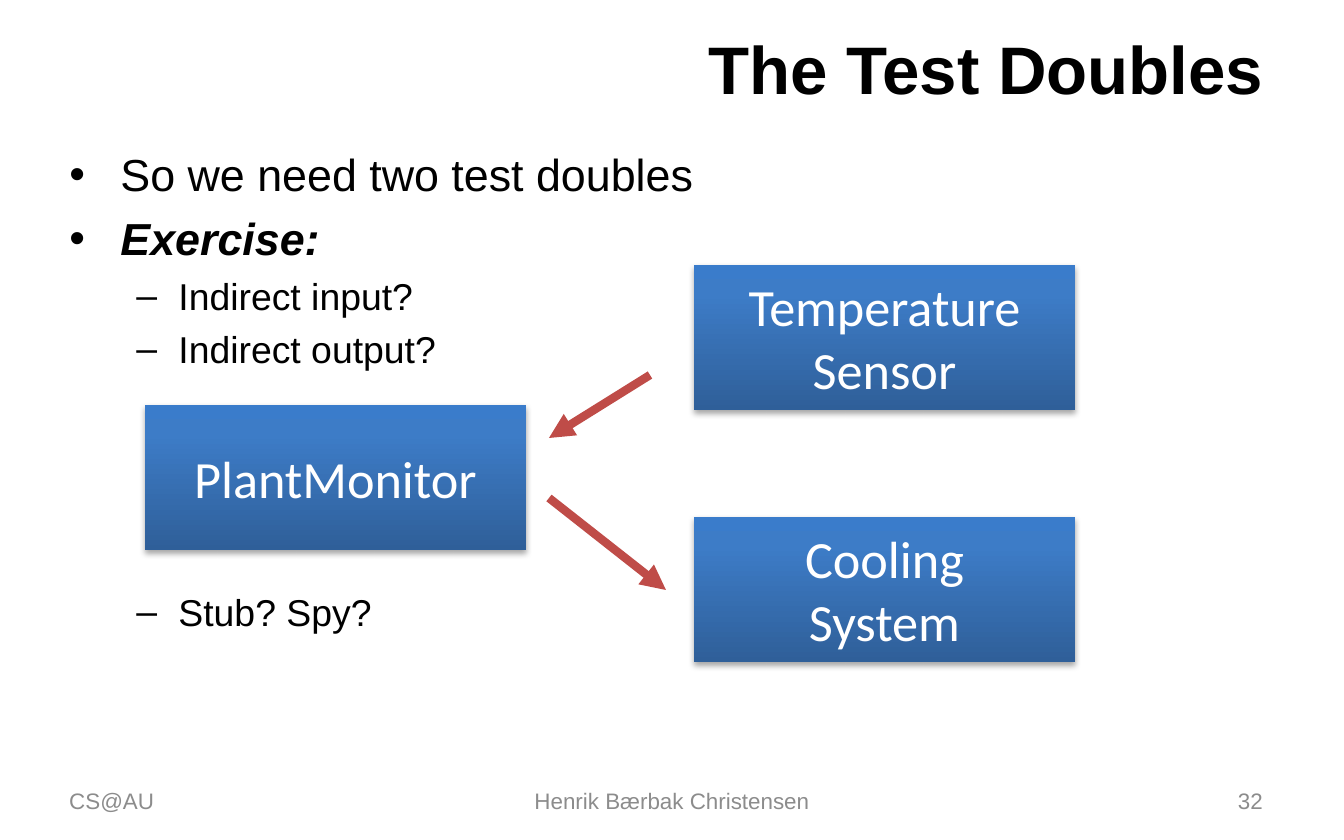
import pptx
import pptx.util
import pptx.dml.color
import pptx.enum.shapes
import pptx.enum.text
import pptx.oxml
import pptx.oxml.ns

PX = 914400 / 134.4
ALIGN = pptx.enum.text.PP_ALIGN
MIDDLE = pptx.enum.text.MSO_ANCHOR.MIDDLE

THEME = {
    "font": "Arial", "box_font": "Calibri",
    "text": "000000", "footer": "8C8C8C", "box_text": "FFFFFF", "arrow": "BF4C48",
    "gradient": [(0, "2F5F99"), (80, "3D7CC7"), (100, "3A7CCB")],
    "title_size": 36, "level_sizes": (24, 20), "box_size": 28, "footer_size": 12,
    "arrow_width": 4.5,
}

# Content; positions are left, top, width, height in px
TITLE = "The Test Doubles"
TITLE_AREA = (67, 24, 1210, 87)
BODY_AREA = (56, 140, 1220, 634)
BULLETS = [  # text, level, emphasised, space before in points
    ("So we need two test doubles", 0, False, 0),
    ("Exercise:", 0, True, 5.5),
    ("Indirect input?", 1, False, 4.6),
    ("Indirect output?", 1, False, 4.6),
    ("Stub? Spy?", 1, False, 116.5),  # leaves room for the diagram
]
LEVELS = [("•", 51, 51), ("–", 109, 42)]  # mark, left margin, hanging indent

BOX_SIZE = (381, 145)
BOXES = [
    ("PlantMonitor", 145, 405),
    ("Cooling\vSystem", 694, 517),
    ("Temperature\vSensor", 694, 265),
]
ARROWS = [((650, 375), (549, 438)), ((549, 498), (666, 590))]

FOOTER_TOP, FOOTER_HEIGHT = 778, 45
FOOTERS = [
    ("CS@AU", 56, 313, ALIGN.LEFT),
    ("Henrik Bærbak Christensen", 459, 426, ALIGN.CENTER),
    ("32", 963, 313, ALIGN.RIGHT),
]


def px(*lengths):
    return [pptx.util.Emu(round(length * PX)) for length in lengths]


def xml(tag, inner="", attributes=""):
    namespace = pptx.oxml.ns.nsdecls("a")
    return pptx.oxml.parse_xml(f"<a:{tag} {namespace} {attributes}>{inner}</a:{tag}>")


def style(paragraph, size, color, font="font", bold=False, italic=False):
    for run in paragraph.runs:
        run.font.name = THEME[font]
        run.font.size = pptx.util.Pt(size)
        run.font.bold, run.font.italic = bold, italic
        run.font.color.rgb = pptx.dml.color.RGBColor.from_string(THEME[color])


def place(shape, area):
    shape.left, shape.top, shape.width, shape.height = px(*area)
    shape.text_frame.auto_size = pptx.enum.text.MSO_AUTO_SIZE.NONE
    shape.text_frame.word_wrap = True


def add_bullets(text_frame):
    for index, (text, level, strong, space) in enumerate(BULLETS):
        paragraph = text_frame.add_paragraph() if index else text_frame.paragraphs[0]
        paragraph.text = text
        paragraph.level = level
        mark, margin, hanging = LEVELS[level]
        properties = paragraph._p.get_or_add_pPr()
        properties.set("marL", str(px(margin)[0]))
        properties.set("indent", str(-px(hanging)[0]))
        properties.append(xml("buFont", attributes='typeface="Arial"'))
        properties.append(xml("buChar", attributes=f'char="{mark}"'))
        paragraph.space_before = pptx.util.Pt(space)
        style(paragraph, THEME["level_sizes"][level], "text", bold=strong, italic=strong)


def add_box(slide, text, left, top):
    shape = slide.shapes.add_shape(
        pptx.enum.shapes.MSO_SHAPE.RECTANGLE, *px(left, top, *BOX_SIZE))
    shape.line.fill.background()
    # Gradient rising from dark to light, and a soft shadow below
    stops = "".join(f'<a:gs pos="{position * 1000}"><a:srgbClr val="{color}"/></a:gs>'
                    for position, color in THEME["gradient"])
    gradient = xml("gradFill", f'<a:gsLst>{stops}</a:gsLst><a:lin ang="16200000" scaled="0"/>',
                   'rotWithShape="1"')
    shadow = xml("effectLst",
                 '<a:outerShdw blurRad="40000" dist="23000" dir="5400000" rotWithShape="0">'
                 '<a:srgbClr val="000000"><a:alpha val="35000"/></a:srgbClr></a:outerShdw>')
    outline = shape._element.spPr.find(pptx.oxml.ns.qn("a:ln"))
    outline.addprevious(gradient)
    outline.addnext(shadow)
    frame = shape.text_frame
    frame.text = text
    frame.vertical_anchor = MIDDLE
    frame.paragraphs[0].alignment = ALIGN.CENTER
    style(frame.paragraphs[0], THEME["box_size"], "box_text", "box_font")


def add_arrow(slide, start, end):
    arrow = slide.shapes.add_connector(
        pptx.enum.shapes.MSO_CONNECTOR.STRAIGHT, *px(*start, *end))
    arrow.line.width = pptx.util.Pt(THEME["arrow_width"])
    arrow.line.color.rgb = pptx.dml.color.RGBColor.from_string(THEME["arrow"])
    arrow.line._get_or_add_ln().append(xml("tailEnd", attributes='type="triangle"'))
    arrow._element.spPr.append(xml("effectLst"))


def main():
    presentation = pptx.Presentation()
    presentation.slide_width, presentation.slide_height = px(1344, 840)
    slide = presentation.slides.add_slide(presentation.slide_layouts[1])

    # Title and list
    title, body = slide.shapes.title, slide.placeholders[1]
    place(title, TITLE_AREA)
    title.text_frame.text = TITLE
    title.text_frame.vertical_anchor = MIDDLE
    title.text_frame.paragraphs[0].alignment = ALIGN.RIGHT
    style(title.text_frame.paragraphs[0], THEME["title_size"], "text", bold=True)
    place(body, BODY_AREA)
    add_bullets(body.text_frame)

    # Footer line
    for text, left, width, alignment in FOOTERS:
        area = (left, FOOTER_TOP, width, FOOTER_HEIGHT)
        footer = slide.shapes.add_textbox(*px(*area))
        place(footer, area)
        footer.text_frame.text = text
        footer.text_frame.vertical_anchor = MIDDLE
        footer.text_frame.paragraphs[0].alignment = alignment
        style(footer.text_frame.paragraphs[0], THEME["footer_size"], "footer")

    # Diagram
    for box in BOXES:
        add_box(slide, *box)
    for start, end in ARROWS:
        add_arrow(slide, start, end)

    presentation.save("out.pptx")


if __name__ == "__main__":
    main()
